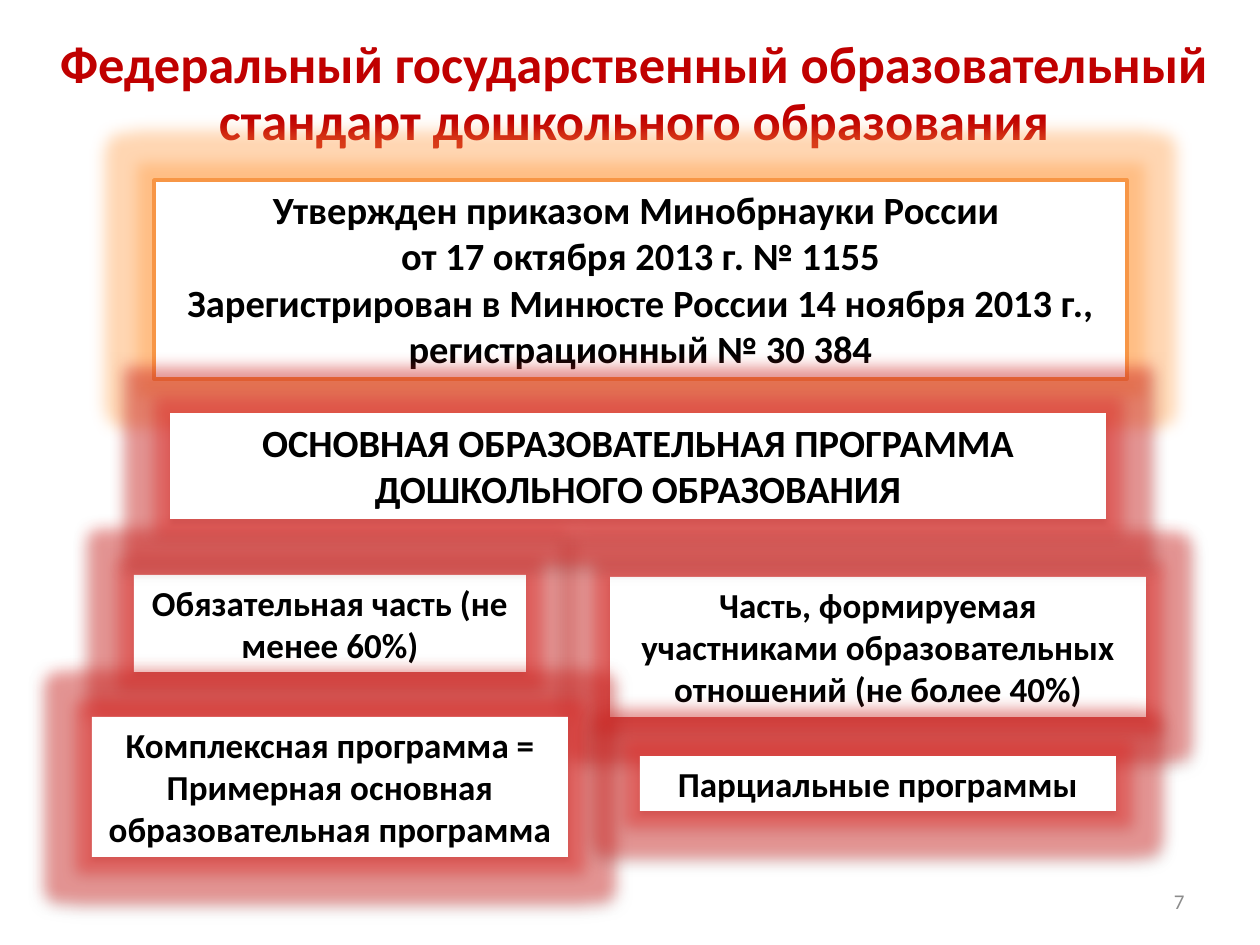
from lxml import etree
from pptx import Presentation
from pptx.dml.color import RGBColor
from pptx.enum.shapes import MSO_SHAPE
from pptx.enum.text import MSO_ANCHOR, PP_ALIGN
from pptx.oxml.ns import qn
from pptx.util import Pt

PX = 914400 / 126  # EMU per px
COLORS = {"title": "C00000", "text": "000000", "number": "8C8C8C",
          "fill": "FFFFFF", "orange": "F79646",
          "orange_glow": "FF9A40", "red_glow": "EB2622"}


def px(*values):
    return [round(v * PX) for v in values]


def style(p, size, color, bold=True, align=PP_ALIGN.CENTER):
    p.alignment = align
    p.font.name = "Calibri"
    p.font.size = Pt(size)
    p.font.bold = bold
    p.font.color.rgb = RGBColor.from_string(COLORS[color])


prs = Presentation()
prs.slide_width, prs.slide_height = px(1260, 945)
slide = prs.slides.add_slide(prs.slide_layouts[5])

# Title
title = slide.shapes.title
title.left, title.top, title.width, title.height = px(34, 16, 1201, 158)
tf = title.text_frame
tf.word_wrap = True
tf.vertical_anchor = MSO_ANCHOR.MIDDLE
tf.text = "Федеральный государственный образовательный стандарт дошкольного образования"
p = tf.paragraphs[0]
p.line_spacing = 0.9
style(p, 30, "title")

# Slide number
sp = slide.shapes.add_textbox(*px(903, 876, 294, 50))
tf = sp.text_frame
tf.word_wrap = True
tf.vertical_anchor = MSO_ANCHOR.MIDDLE
tf.text = "7"
style(tf.paragraphs[0], 12, "number", bold=False, align=PP_ALIGN.RIGHT)

# Glowing boxes: position, font size, glow colour, text
boxes = [
    ((154, 180, 973, 199), 22, "orange_glow",
     "Утвержден приказом Минобрнауки России \n"
     "от 17 октября 2013 г. № 1155\n"
     "Зарегистрирован в Минюсте России 14 ноября 2013 г., регистрационный № 30 384"),
    ((134, 575, 392, 97), 20, "red_glow", "Обязательная часть (не менее 60%)"),
    ((610, 577, 536, 140), 20, "red_glow",
     "Часть, формируемая участниками образовательных отношений (не более 40%)"),
    ((170, 413, 936, 106), 22, "red_glow",
     "ОСНОВНАЯ ОБРАЗОВАТЕЛЬНАЯ ПРОГРАММА ДОШКОЛЬНОГО ОБРАЗОВАНИЯ"),
    ((92, 717, 476, 140), 20, "red_glow",
     "Комплексная программа = Примерная основная образовательная программа"),
    ((640, 756, 476, 55), 20, "red_glow", "Парциальные программы"),
]
for place, size, glow, text in boxes:
    sp = slide.shapes.add_shape(MSO_SHAPE.RECTANGLE, *px(*place))
    sp.shadow.inherit = False
    sp.fill.solid()
    sp.fill.fore_color.rgb = RGBColor.from_string(COLORS["fill"])
    outlined = glow == "orange_glow"
    if outlined:
        sp.line.color.rgb = RGBColor.from_string(COLORS["orange"])
        sp.line.width = Pt(2)
    else:
        sp.line.fill.background()

    # Glow, and a soft shadow under the boxes without an outline
    effects = [("glow", {"rad": Pt(18)}, COLORS[glow], 40000)]
    if not outlined:
        effects.append(("outerShdw", {"blurRad": Pt(3.5), "dist": Pt(2.2),
                                      "dir": 5400000, "rotWithShape": 0},
                        "000000", 32000))
    effect_list = sp._element.spPr.find(qn("a:effectLst"))
    for tag, attrs, color, alpha in effects:
        effect = etree.SubElement(effect_list, qn("a:" + tag),
                                  {k: str(v) for k, v in attrs.items()})
        clr = etree.SubElement(effect, qn("a:srgbClr"), val=color)
        etree.SubElement(clr, qn("a:alpha"), val=str(alpha))

    tf = sp.text_frame
    tf.word_wrap = True
    tf.vertical_anchor = MSO_ANCHOR.TOP
    tf.text = text
    for p in tf.paragraphs:
        style(p, size, "text")

prs.save("out.pptx")
